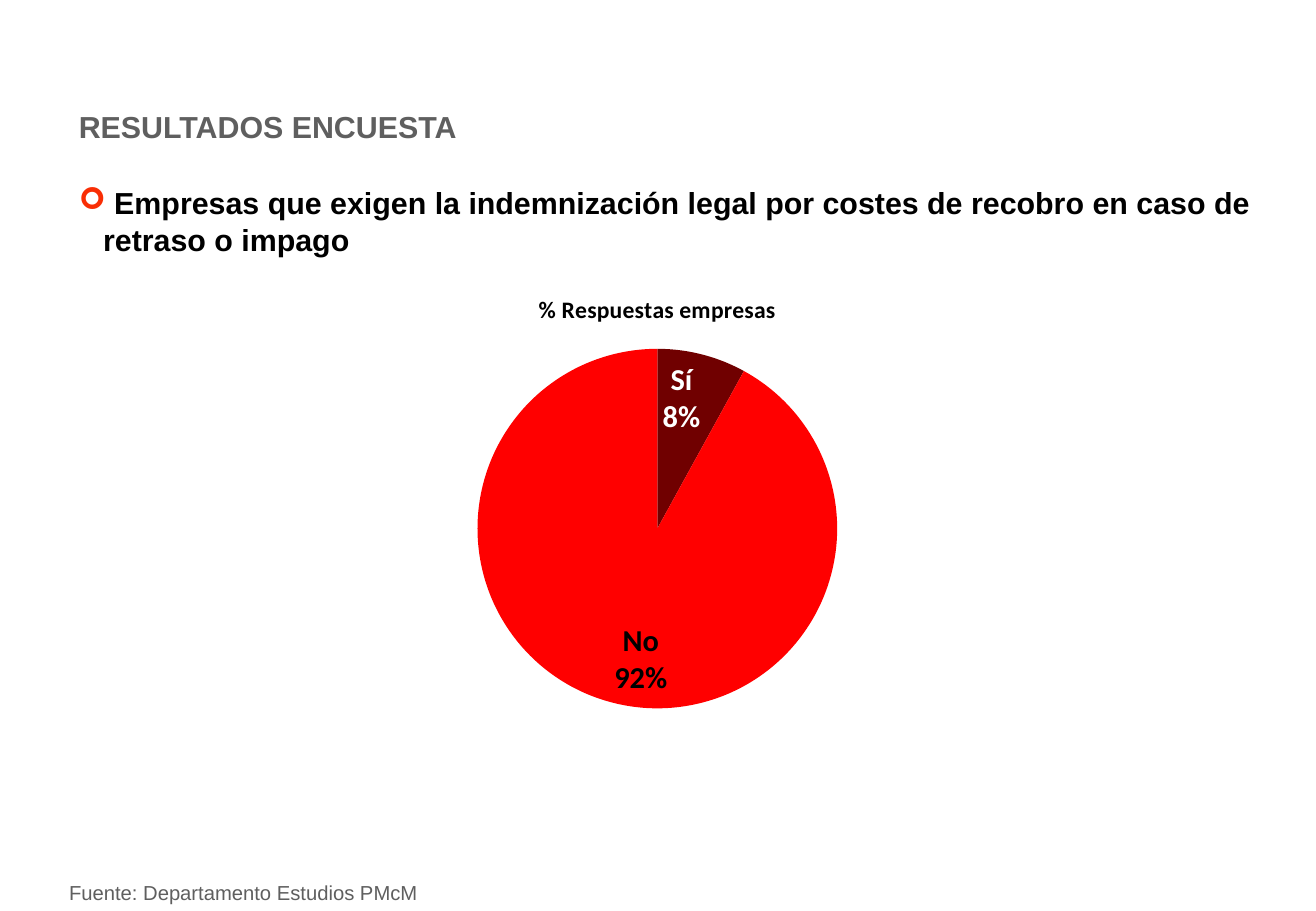
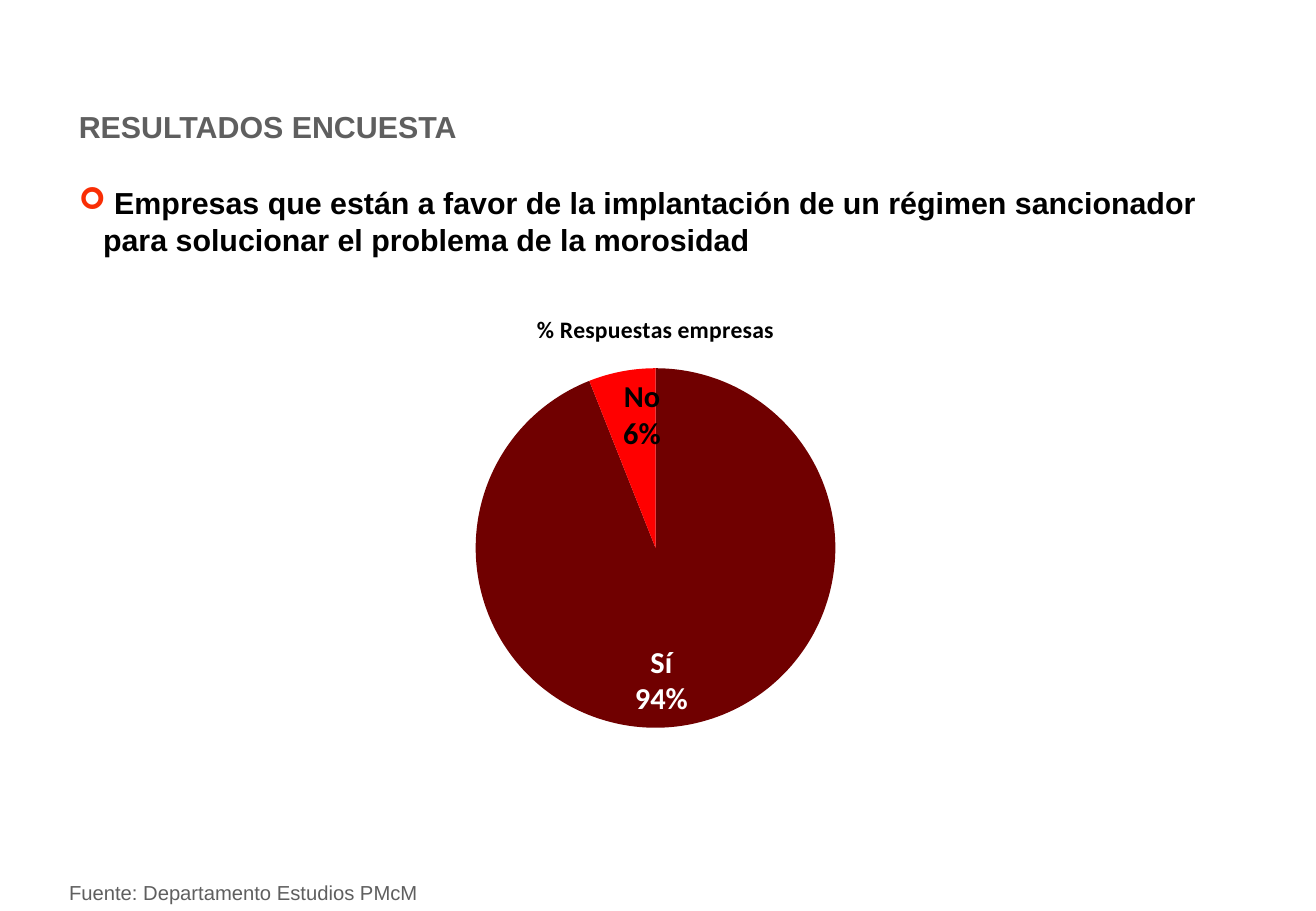
"""Build two survey slides, each with a heading, a question, a pie chart and a source."""
from lxml import etree
from pptx import Presentation
from pptx.chart.data import CategoryChartData as Data
from pptx.dml.color import RGBColor
from pptx.enum.chart import XL_CHART_TYPE as Kind, XL_LABEL_POSITION as Pos
from pptx.enum.text import MSO_ANCHOR as Anchor, MSO_AUTO_SIZE as Fit
from pptx.oxml import parse_xml
from pptx.oxml.ns import nsdecls, qn
from pptx.util import Inches, Pt

GREY, BLACK, WHITE = "5F5F5F", "000000", "FFFFFF"
WINE, RED = "700000", "FF0000"
BULLET = (
    f'<a:buClr {nsdecls("a")}><a:srgbClr val="F92E05"/></a:buClr>',
    f'<a:buFont {nsdecls("a")} typeface="Wingdings"/>',
    f'<a:buChar {nsdecls("a")} char="➢"/>',
)
SLIDES = [
    (" Empresas que exigen la indemnización legal por costes de recobro"
     " en caso de retraso o impago", (0.08, 0.92), (1.58, 2.25, 7.66, 3.72)),
    (" Empresas que están a favor de la implantación de un régimen sancionador"
     " para solucionar el problema de la morosidad", (0.94, 0.06), (1.41, 2.41, 7.97, 3.72)),
]


def style(font, name, size, color, bold=True):
    font.name, font.size, font.bold = name, Pt(size), bold
    font.color.rgb = RGBColor.from_string(color)


def write(slide, box, words, size, color, bold=True, wrap=True):
    frame = slide.shapes.add_textbox(*map(Inches, box)).text_frame
    frame.word_wrap, frame.auto_size = wrap, Fit.SHAPE_TO_FIT_TEXT
    run = frame.paragraphs[0].add_run()
    run.text = words
    style(run.font, "Arial", size, color, bold)
    return frame


deck = Presentation()
deck.slide_width, deck.slide_height = Inches(10.83), Inches(7.5)
fill = deck.slide_master.background.fill
fill.solid()
fill.fore_color.rgb = RGBColor.from_string(WHITE)

for query, shares, box in SLIDES:
    slide = deck.slides.add_slide(deck.slide_layouts[6])
    write(slide, (0.55, 0.84, 7.59, 0.4), "RESULTADOS ENCUESTA", 18, GREY)
    source = write(slide, (0.47, 7.2, 3.1, 0.3), "Fuente: Departamento Estudios PMcM",
                   12, GREY, False, False)
    source.vertical_anchor = Anchor.MIDDLE

    frame = write(slide, (0.55, 1.47, 9.98, 0.71), query, 18, BLACK)
    props = frame.paragraphs[0]._p.get_or_add_pPr()
    props.set("marL", str(Inches(0.2)))
    props.set("indent", str(Inches(-0.2)))
    for mark in BULLET:
        props.append(parse_xml(mark))

    data = Data(number_format="0%")
    data.categories = ["Sí", "No"]
    data.add_series("% Respuestas empresas", shares)
    chart = slide.shapes.add_chart(Kind.PIE, *map(Inches, box), data).chart
    style(chart.font, "Calibri", 10, BLACK, False)
    chart.has_legend = False
    chart.has_title = True
    title = chart.chart_title
    title.include_in_layout = False
    run = title.text_frame.paragraphs[0].add_run()
    run.text = "% Respuestas empresas"
    style(run.font, "Calibri", 14, BLACK)

    plot = chart.plots[0]
    plot.vary_by_categories = True
    pie = plot.series[0]
    for i, color in enumerate((WINE, RED)):
        fill = pie.points[i].format.fill
        fill.solid()
        fill.fore_color.rgb = RGBColor.from_string(color)

    labels = pie.data_labels
    labels.show_value = labels.show_category_name = True
    labels.number_format, labels.number_format_is_linked = "0%", False
    labels.position = Pos.INSIDE_END
    style(labels.font, "Calibri", 18, BLACK)
    yes = pie.points[0].data_label
    style(yes.font, "Calibri", 18, WHITE)
    yes.position = Pos.INSIDE_END
    for flag in pie._element.iter(qn("c:showCatName")):
        flag.set("val", "1")
    for flag in pie._element.iter(qn("c:showBubbleSize")):
        gap = etree.Element(qn("c:separator"))
        gap.text = "\n"
        flag.addnext(gap)

deck.save("out.pptx")
